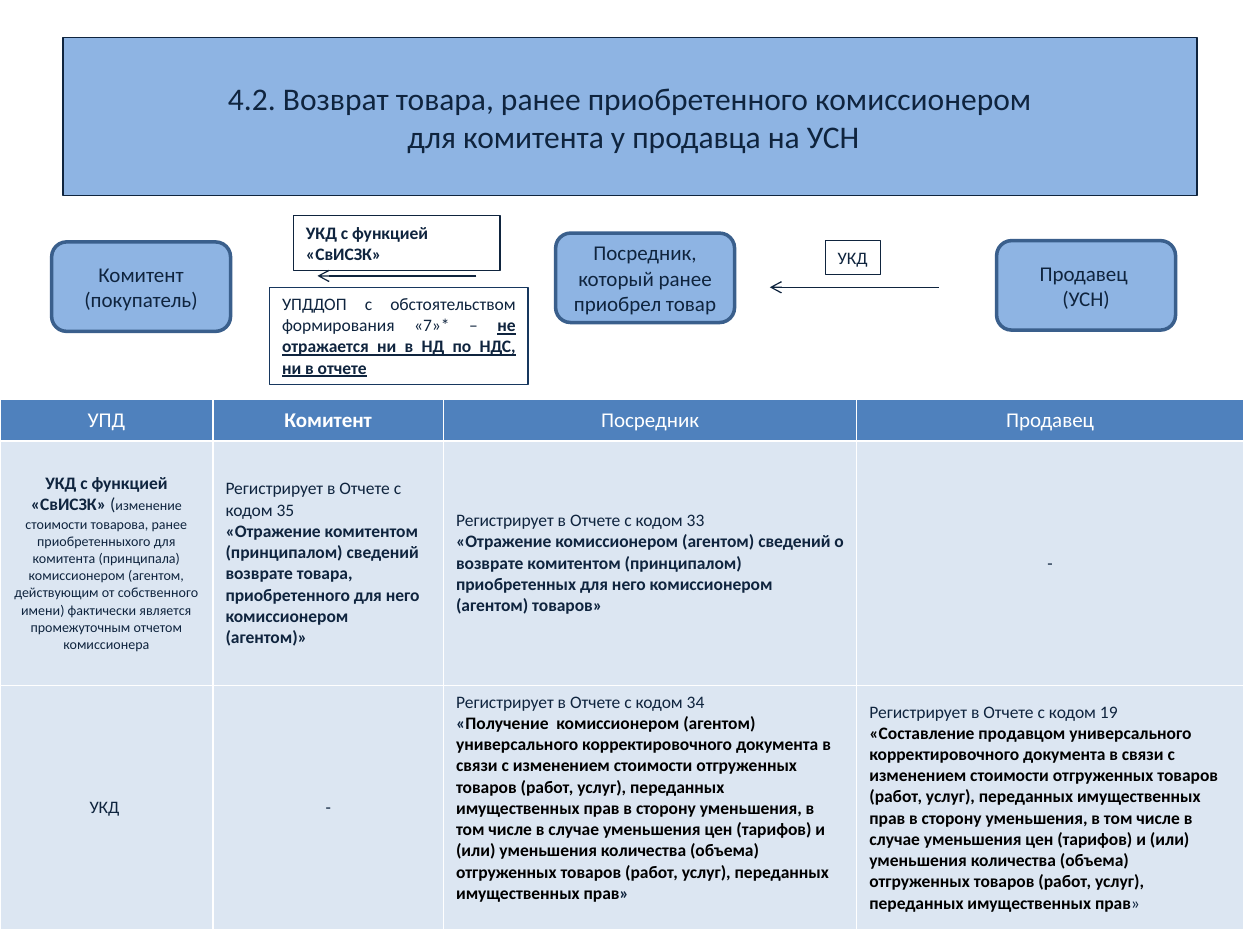
from collections import namedtuple

from lxml import etree
from pptx import Presentation, util as u
from pptx.dml.color import RGBColor
from pptx.enum import shapes, text
from pptx.oxml import ns

NAVY = RGBColor(0x0F, 0x24, 0x3E)
DEEP_BLUE = RGBColor(0x17, 0x37, 0x5E)
EDGE = RGBColor(0x3A, 0x5F, 0x8C)
SKY = RGBColor(0x8E, 0xB4, 0xE3)
HEADER = RGBColor(0x4F, 0x81, 0xBD)
PALE = RGBColor(0xDC, 0xE6, 0xF2)
WHITE = RGBColor(0xFF, 0xFF, 0xFF)
BLACK = RGBColor(0, 0, 0)

FONT = "Calibri"
LEFT, CENTER = text.PP_ALIGN.LEFT, text.PP_ALIGN.CENTER
JUSTIFY = text.PP_ALIGN.JUSTIFY

# The slide is a grid of 100 columns by 75 rows
UNIT = u.Inches(10) // 100
Box = namedtuple("Box", "left top width height")
Span = namedtuple("Span", "text bold size color underline",
                  defaults=(False, None, None, False))


def emu(box):
    return [u.Emu(round(value * UNIT)) for value in box]


def within(region, left, top, width, height):
    return Box(region.left + left, region.top + top, width, height)


def style(span, size, color, bold=False, underline=False):
    font = span.font
    font.name, font.size, font.color.rgb = FONT, u.Pt(size), color
    font.bold, font.underline = bold, underline


def write(frame, paragraphs, size, color, align):
    """Fill a frame with paragraphs, each one a list of Spans."""
    for index, spans in enumerate(paragraphs):
        para = frame.paragraphs[0] if index == 0 else frame.add_paragraph()
        para.alignment = align
        for part in spans:
            span = para.add_run()
            span.text = part.text
            style(span, part.size or size, part.color or color, part.bold, part.underline)


def outline(shape, color, width):
    shape.line.color.rgb = color
    shape.line.width = u.Pt(width)


def add_title(page, box):
    title = page.shapes.title
    title.left, title.top, title.width, title.height = emu(box)
    title.fill.solid()
    title.fill.fore_color.rgb = SKY
    outline(title, NAVY, 0.75)
    title.text_frame.vertical_anchor = text.MSO_ANCHOR.MIDDLE
    para = title.text_frame.paragraphs[0]
    para.text = ("4.2. Возврат товара, ранее приобретенного комиссионером\v"
                 " для комитента у продавца на УСН")
    para.alignment = CENTER
    for span in para.runs:
        style(span, 18, NAVY)


def add_party(page, box, lines):
    party = page.shapes.add_shape(shapes.MSO_SHAPE.ROUNDED_RECTANGLE, *emu(box))
    party.shadow.inherit = False
    party.fill.solid()
    party.fill.fore_color.rgb = SKY
    outline(party, EDGE, 2)
    party.text_frame.vertical_anchor = text.MSO_ANCHOR.MIDDLE
    write(party.text_frame, [[Span(line)] for line in lines], 12, NAVY, CENTER)


def add_label(page, box, spans, align=LEFT, wrap=True, color=NAVY):
    label = page.shapes.add_textbox(*emu(box))
    outline(label, color, 0.75)
    label.text_frame.word_wrap = wrap
    label.text_frame.auto_size = text.MSO_AUTO_SIZE.SHAPE_TO_FIT_TEXT
    write(label.text_frame, [spans], 10, NAVY, align)


def add_arrow(page, box):
    """Draw an arrow along the top of the box, from right to left."""
    left, top, width, _ = emu(box)
    arrow = page.shapes.add_connector(
        shapes.MSO_CONNECTOR.STRAIGHT, left + width, top, left, top)
    outline(arrow, NAVY, 0.75)
    etree.SubElement(arrow.line._get_or_add_ln(), ns.qn("a:tailEnd"), type="arrow")
    etree.SubElement(arrow._element.spPr, ns.qn("a:effectLst"))


def add_flow(page, region):
    # Parties
    for left, top, lines in [
        (0, 2.1, ["Комитент (покупатель)"]),
        (40, 1.4, ["Посредник, который ранее приобрел товар"]),
        (75, 2, ["Продавец ", "(УСН)"]),
    ]:
        add_party(page, within(region, left, top, 14.2, 7.1), lines)

    # Documents passed between them
    add_arrow(page, within(region, 57, 5.7, 13.4, 0))
    add_arrow(page, within(region, 21.1, 4.8, 12.6, 0))
    add_label(page, within(region, 61.4, 2, 4.4, 2.7), [Span("УКД")], wrap=False)
    add_label(page, within(region, 19.2, 0, 16.4, 4.4),
              [Span("УКД с функцией «СвИСЗК»", True)])
    add_label(page, within(region, 17.3, 5.7, 20.5, 7.7),
              [Span("УПДДОП с обстоятельством формирования «7»* – "),
               Span("не отражается ни в НД по НДС, ни в отчете", True, underline=True)],
              align=JUSTIFY, color=DEEP_BLUE)


def report(code, *spans):
    return [[Span(f"Регистрирует в Отчете с кодом {code}")], list(spans)]


def table_rows():
    goods = ("универсального корректировочного документа в связи с изменением стоимости "
             "отгруженных товаров (работ, услуг), переданных имущественных прав в сторону "
             "уменьшения, в том числе в случае уменьшения цен (тарифов) и (или) уменьшения "
             "количества (объема) отгруженных товаров (работ, услуг), переданных "
             "имущественных прав")
    dash = [[Span("-")]]
    header = [[[Span(name, name == "Комитент")]]
              for name in ("УПД", "Комитент", "Посредник", "Продавец")]
    function = [[
        Span("УКД с функцией «СвИСЗК» ", True), Span("("),
        Span("изменение стоимости товарова, ранее приобретенныхого для комитента "
             "(принципала) комиссионером (агентом, действующим от собственного имени) "
             "фактически является промежуточным отчетом комиссионера", size=8)]]
    principal = report(35, Span(
        "«Отражение комитентом (принципалом) сведений возврате товара, "
        "приобретенного для него комиссионером (агентом)»", True))
    agent = report(33, Span(
        "«Отражение комиссионером (агентом) сведений о возврате комитентом "
        "(принципалом) приобретенных для него комиссионером (агентом) товаров»", True))
    receipt = report(34, Span("«", True),
                     Span("Получение  комиссионером (агентом) " + goods, True, color=BLACK),
                     Span("»", True))
    issue = report(19, Span("«Составление продавцом " + goods, True, color=BLACK), Span("»"))
    return [header,
            [function, principal, agent, dash],
            [[[Span("УКД ")]], dash, receipt, issue]]


def add_register(page, box):
    rows = table_rows()
    table = page.shapes.add_table(len(rows), len(rows[0]), *emu(box)).table
    for column, width in zip(table.columns, (16.9, 18.3, 32.8, 30.7)):
        column.width = u.Emu(round(width * UNIT))
    for row, height in zip(table.rows, (3.3, 19.4, 19.4)):
        row.height = u.Emu(round(height * UNIT))
    for r, contents in enumerate(rows):
        for c, paragraphs in enumerate(contents):
            cell = table.cell(r, c)
            cell.fill.solid()
            cell.fill.fore_color.rgb = PALE if r else HEADER
            top = (r, c) == (2, 2)
            cell.vertical_anchor = text.MSO_ANCHOR.TOP if top else text.MSO_ANCHOR.MIDDLE
            align = LEFT if len(paragraphs) > 1 else CENTER
            write(cell.text_frame, paragraphs, 10 if r else 12, NAVY if r else WHITE, align)


def main():
    deck = Presentation()
    deck.slide_width, deck.slide_height = 100 * UNIT, 75 * UNIT
    page = deck.slides.add_slide(deck.slide_layouts[5])
    add_title(page, Box(5, 3, 90, 12.5))
    add_flow(page, Box(4.1, 17.1, 89.2, 13.4))
    add_register(page, Box(0, 31.7, 98.7, 42.1))
    deck.save("out.pptx")


if __name__ == "__main__":
    main()
